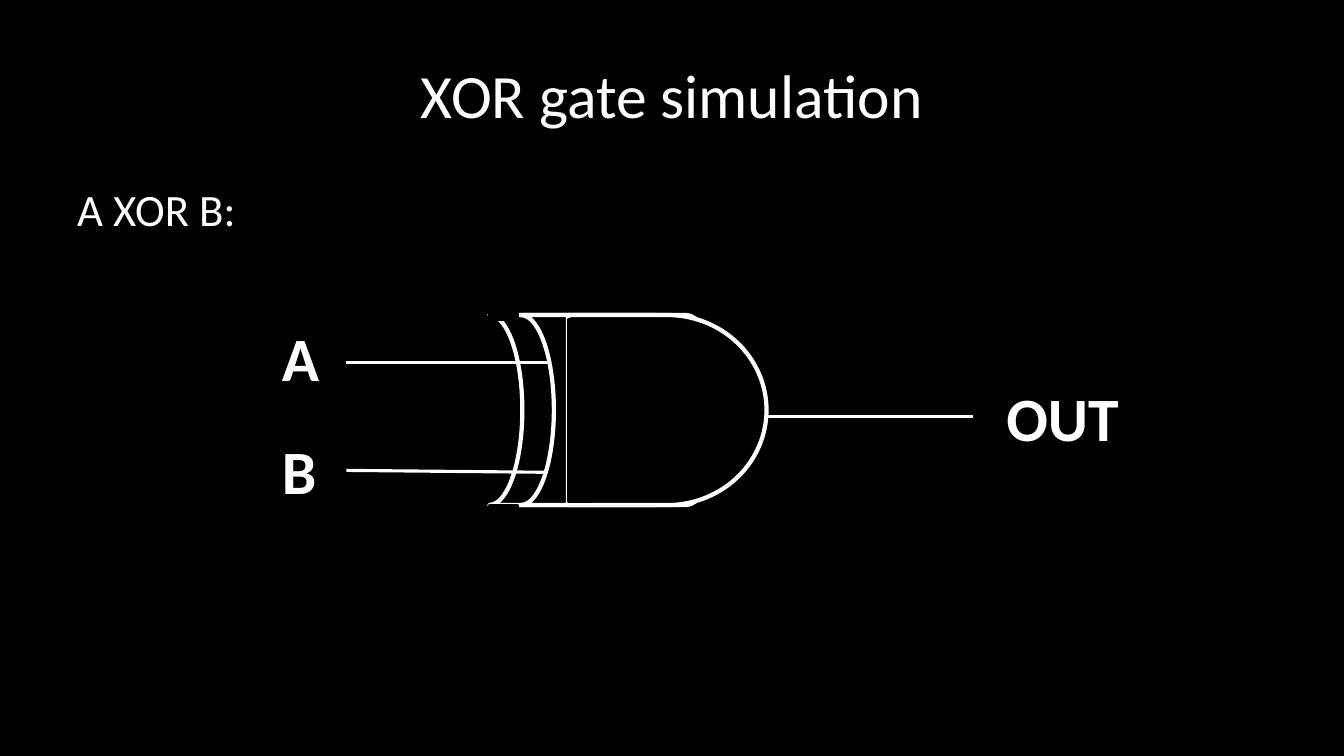
from pptx import Presentation
from pptx import util as u
from pptx.dml.color import RGBColor
from pptx.enum import shapes, text
from pptx.oxml.ns import qn
from lxml import etree

COLORS = {"ink": "FFFFFF", "ground": "000000"}
GATE_TOP, GATE_W, GATE_H = 300, 189, 181
BACK_X, INPUT_X, BODY_X = 466, 496, 541


class Board:
    font = "Calibri"

    def __init__(self, slide):
        self.s = slide
        fill = slide.background.fill
        fill.solid()
        fill.fore_color.rgb = self.color("ground")

    @staticmethod
    def px(n):
        return u.Emu(n * 9525)

    @staticmethod
    def color(name):
        return RGBColor.from_string(COLORS[name])

    def shape(self, kind, box, line="ink", weight=3, rotation=0):
        sp = self.s.shapes.add_shape(kind, *map(self.px, box))
        sp.shadow.inherit = False
        sp.rotation = rotation
        sp.fill.solid()
        sp.fill.fore_color.rgb = self.color("ground")
        sp.line.color.rgb = self.color(line)
        sp.line.width = u.Pt(weight)

    def wire(self, x1, y1, x2, y2):
        ends = map(self.px, (x1, y1, x2, y2))
        c = self.s.shapes.add_connector(shapes.MSO_CONNECTOR.STRAIGHT, *ends)
        c.line.color.rgb = self.color("ink")
        c.line.width = u.Pt(2.25)
        etree.SubElement(c._element.spPr, qn("a:effectLst"))

    def label(self, words, box, size=44, bold=False, wrap=False,
              align=text.PP_ALIGN.LEFT, anchor=text.MSO_ANCHOR.TOP):
        tf = self.s.shapes.add_textbox(*map(self.px, box)).text_frame
        tf.word_wrap = wrap
        tf.vertical_anchor = anchor
        p = tf.paragraphs[0]
        p.text = words
        p.alignment = align
        p.font.name = self.font
        p.font.size = u.Pt(size)
        p.font.bold = bold
        p.font.color.rgb = self.color("ink")


def main():
    prs = Presentation()
    prs.slide_width, prs.slide_height = Board.px(1280), Board.px(720)
    board = Board(prs.slides.add_slide(prs.slide_layouts[6]))
    kinds = shapes.MSO_SHAPE

    def gate_part(kind, x, rotation=0):
        board.shape(kind, (x, GATE_TOP, GATE_W, GATE_H), rotation=rotation)

    gate_part(kinds.FLOWCHART_STORED_DATA, BACK_X, 180)
    board.label("XOR gate simulation", (64, 29, 1152, 120), wrap=True,
                align=text.PP_ALIGN.CENTER, anchor=text.MSO_ANCHOR.MIDDLE)
    board.label("A XOR B:", (64, 168, 1152, 475), size=32, wrap=True)

    for wire in ((330, 345, BODY_X, 345), (330, 448, BODY_X, 450),
                 (731, 397, 927, 397)):
        board.wire(*wire)
    for words, x, y, w in (("A", 259, 300, 56), ("B", 259, 408, 53),
                           ("OUT", 949, 357, 128)):
        board.label(words, (x, y, w, 81), bold=True)

    gate_part(kinds.FLOWCHART_STORED_DATA, INPUT_X, 180)
    gate_part(kinds.FLOWCHART_DELAY, BODY_X)
    for mask in ((BODY_X, 304, 23, 174), (BACK_X, 258, 27, 46),
                 (BACK_X, GATE_TOP + GATE_H, 27, 46)):
        board.shape(kinds.RECTANGLE, mask, line="ground", weight=2)

    prs.save("out.pptx")


if __name__ == "__main__":
    main()
